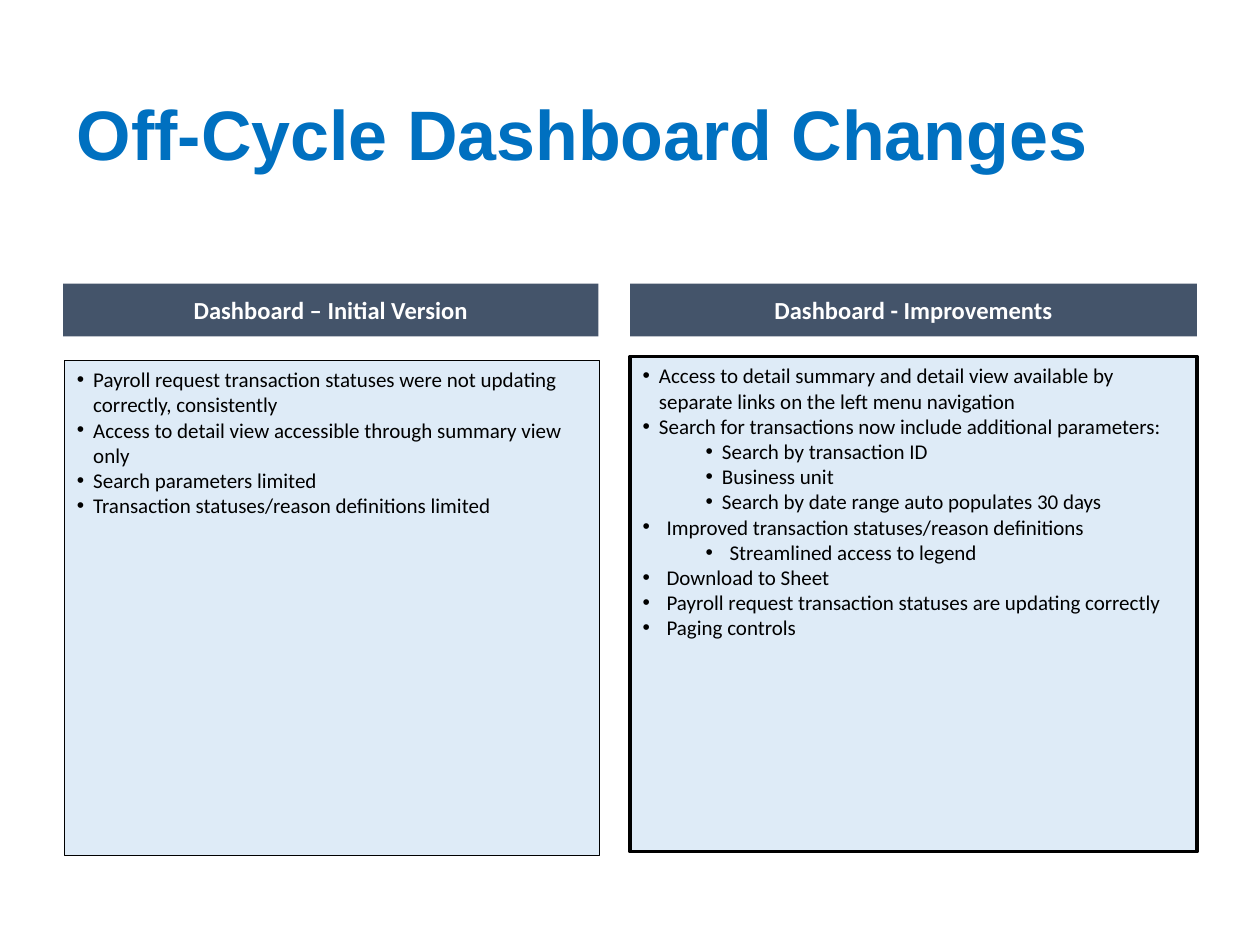
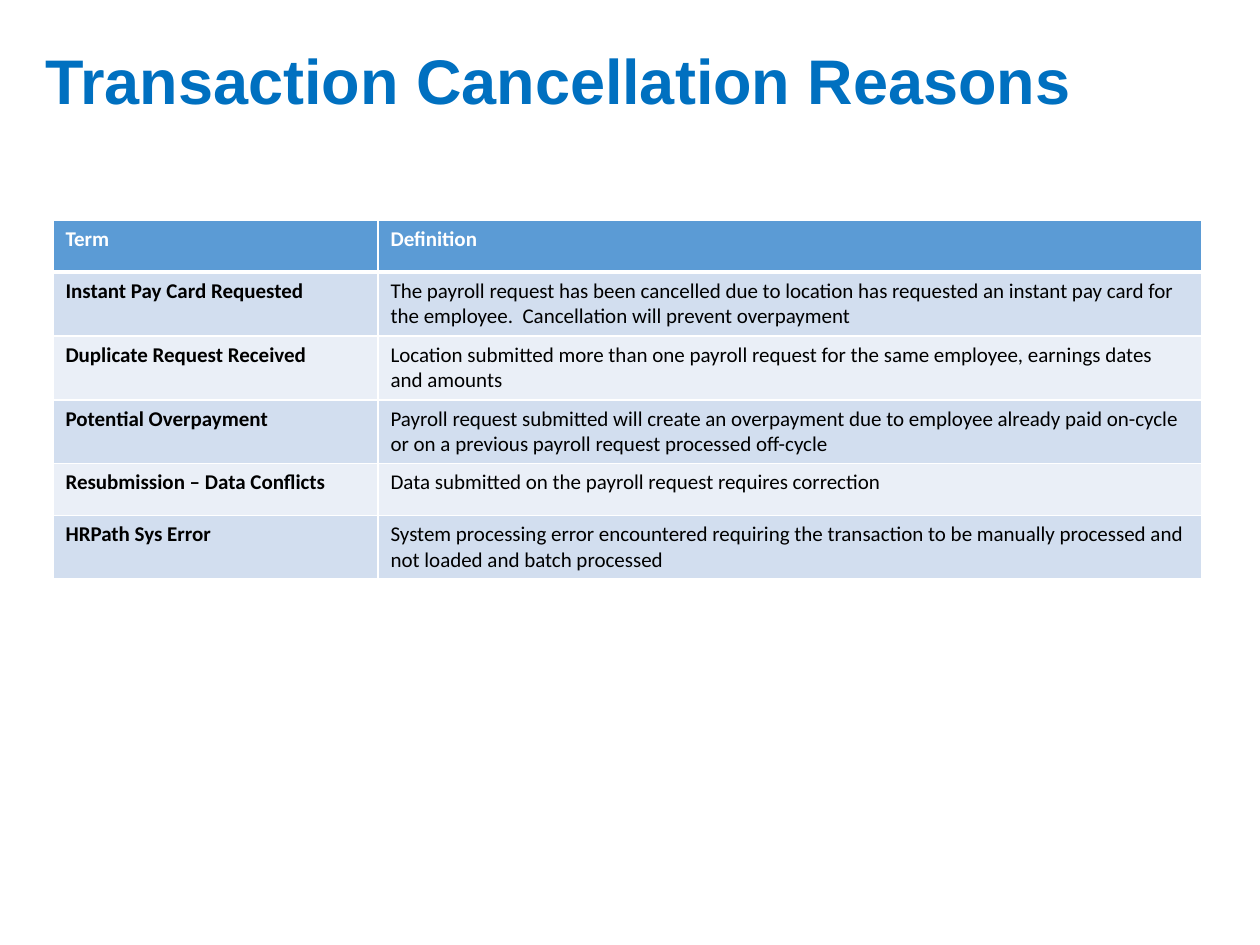
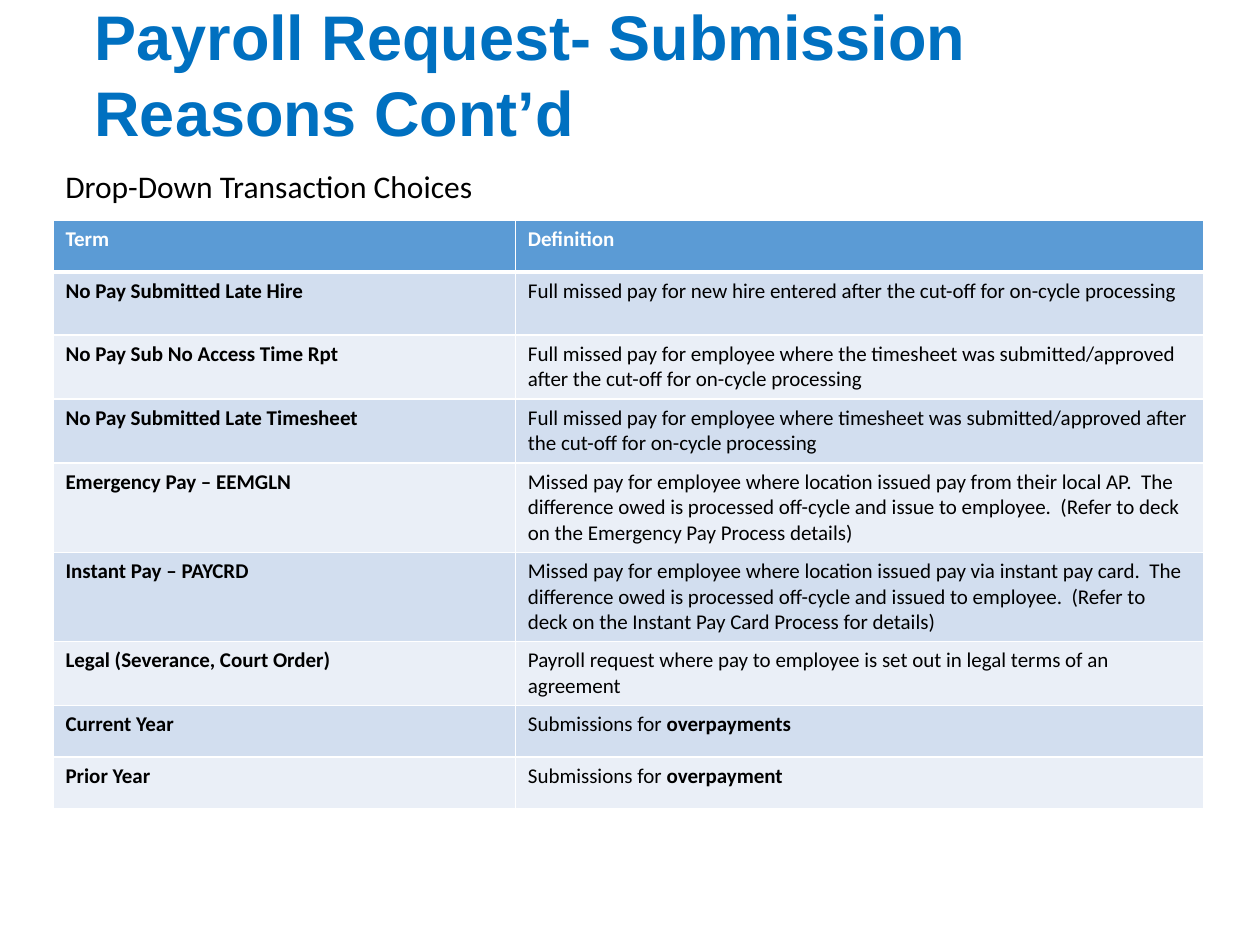
from lxml.etree import SubElement
from pptx import Presentation
from pptx.dml.color import RGBColor
from pptx.enum.text import MSO_ANCHOR, MSO_AUTO_SIZE, PP_ALIGN
from pptx.oxml.ns import qn
from pptx.util import Inches, Pt

SLIDE_WIDTH = Inches(10)
SLIDE_HEIGHT = Inches(7.5)
COLUMN = SLIDE_WIDTH / 10
ROW = SLIDE_HEIGHT / 7.5

TITLE_BLUE = RGBColor(0x00, 0x70, 0xC0)
SLATE = RGBColor(0x44, 0x54, 0x6A)
PANEL_BLUE = RGBColor(0xDE, 0xEB, 0xF7)
HEADER_BLUE = RGBColor(0x5B, 0x9B, 0xD5)
BAND_COLORS = (RGBColor(0xD2, 0xDE, 0xEF), RGBColor(0xEA, 0xEF, 0xF7))
BLACK = RGBColor(0x00, 0x00, 0x00)
WHITE = RGBColor(0xFF, 0xFF, 0xFF)

COMPARISON_LAYOUT = 4
TITLE_ONLY_LAYOUT = 5

INITIAL_VERSION = [
    ("Payroll request transaction statuses were not updating correctly, consistently", 0, 0.13, 0.13),
    ("Access to detail view accessible through summary view only", 0, 0.13, 0.13),
    ("Search parameters limited", 0, 0.13, 0.13),
    ("Transaction statuses/reason definitions limited", 0, 0.13, 0.13),
]

IMPROVEMENTS = [
    ("Access to detail summary and detail view available by separate links on the left menu navigation", 0, 0.13, 0.13),
    ("Search for transactions now include additional parameters:", 0, 0.13, 0.13),
    ("Search by transaction ID", 1, 0.63, 0.13),
    ("Business unit", 1, 0.63, 0.13),
    ("Search by date range auto populates 30 days", 1, 0.63, 0.13),
    ("Improved transaction statuses/reason definitions", 1, 0.19, 0.19),
    ("Streamlined access to legend", 2, 0.69, 0.19),
    ("Download to Sheet", 1, 0.19, 0.19),
    ("Payroll request transaction statuses are updating correctly", 1, 0.19, 0.19),
    ("Paging controls", 1, 0.19, 0.19),
]

CANCELLATION_REASONS = [
    ("Instant Pay Card Requested", 2,
     "The payroll request has been cancelled due to location has requested an instant pay card "
     "for the employee.  Cancellation will prevent overpayment"),
    ("Duplicate Request Received", 2,
     "Location submitted more than one payroll request for the same employee, earnings dates and amounts"),
    ("Potential Overpayment", 2,
     "Payroll request submitted will create an overpayment due to employee already paid on-cycle "
     "or on a previous payroll request processed off-cycle"),
    ("Resubmission – Data Conflicts", 1,
     "Data submitted on the payroll request requires correction"),
    ("HRPath Sys Error", 2,
     "System processing error encountered requiring the transaction to be manually processed "
     "and not loaded and batch processed"),
]

SUBMISSION_REASONS = [
    ("No Pay Submitted Late Hire", 2,
     "Full missed pay for new hire entered after the cut-off for on-cycle processing"),
    ("No Pay Sub No Access Time Rpt", 2,
     "Full missed pay for employee where the timesheet was submitted/approved after the cut-off "
     "for on-cycle processing"),
    ("No Pay Submitted Late Timesheet", 2,
     "Full missed pay for employee where timesheet was submitted/approved after the cut-off "
     "for on-cycle processing"),
    ("Emergency Pay – EEMGLN", 3,
     "Missed pay for employee where location issued pay from their local AP.  The difference owed "
     "is processed off-cycle and issue to employee.  (Refer to deck on the Emergency Pay Process details)"),
    ("Instant Pay – PAYCRD", 3,
     "Missed pay for employee where location issued pay via instant pay card.  The difference owed "
     "is processed off-cycle and issued to employee.  (Refer to deck on the Instant Pay Card Process for details)"),
    ("Legal (Severance, Court Order)", 2,
     "Payroll request where pay to employee is set out in legal terms of an agreement"),
    ("Current Year", 1, "Submissions for *overpayments"),
    ("Prior Year", 1, "Submissions for *overpayment"),
]


def grid_box(left, top, width, height):
    return round(left * COLUMN), round(top * ROW), round(width * COLUMN), round(height * ROW)


def place(shape, box):
    shape.left, shape.top, shape.width, shape.height = grid_box(*box)
    shape.text_frame.word_wrap = True
    shape.text_frame.auto_size = MSO_AUTO_SIZE.NONE


def format_run(run, size, color, bold=False, font_name="Calibri"):
    run.font.name = font_name
    run.font.size = Pt(size)
    run.font.bold = bold
    run.font.color.rgb = color


def add_titled_slide(presentation, layout, title, box, size=36):
    slide = presentation.slides.add_slide(presentation.slide_layouts[layout])
    shape = slide.shapes.title
    place(shape, box)
    shape.text_frame.text = title
    shape.text_frame.vertical_anchor = MSO_ANCHOR.MIDDLE
    paragraph = shape.text_frame.paragraphs[0]
    paragraph.alignment = PP_ALIGN.LEFT
    format_run(paragraph.runs[0], size, TITLE_BLUE, True, "Arial")
    return slide


def fill_header(shape, text, box):
    place(shape, box)
    shape.fill.solid()
    shape.fill.fore_color.rgb = SLATE
    shape.text_frame.text = text
    shape.text_frame.vertical_anchor = MSO_ANCHOR.MIDDLE
    paragraph = shape.text_frame.paragraphs[0]
    paragraph.alignment = PP_ALIGN.CENTER
    paragraph.space_before = Pt(0)
    format_run(paragraph.runs[0], 14, WHITE, True)


def set_bullet(paragraph, margin, hanging):
    properties = paragraph._p.get_or_add_pPr()
    properties.set("marL", str(Inches(margin)))
    properties.set("indent", str(-Inches(hanging)))
    SubElement(properties, qn("a:buFont"), typeface="Arial")
    SubElement(properties, qn("a:buChar"), char="•")


def fill_panel(shape, items, box, line_width):
    place(shape, box)
    shape.fill.solid()
    shape.fill.fore_color.rgb = PANEL_BLUE
    shape.line.color.rgb = BLACK
    shape.line.width = Pt(line_width)
    text_frame = shape.text_frame
    text_frame.text = "\n".join(item[0] for item in items)
    for paragraph, (_, level, margin, hanging) in zip(text_frame.paragraphs, items):
        paragraph.level = level
        paragraph.space_before = Pt(0)
        set_bullet(paragraph, margin, hanging)
        format_run(paragraph.runs[0], 12, BLACK)


def set_borders(cell, widths):
    properties = cell._tc.get_or_add_tcPr()
    for side, width in widths.items():
        line = SubElement(properties, qn(f"a:ln{side}"), w=str(Pt(width)))
        fill = SubElement(line, qn("a:solidFill"))
        SubElement(fill, qn("a:srgbClr"), val=str(WHITE))


def fill_cell(cell, text, row_index, is_term):
    is_header = row_index == 0
    set_borders(cell, {"L": 1, "R": 1, "T": 3 if row_index == 1 else 1, "B": 3 if is_header else 1})
    cell.fill.solid()
    cell.fill.fore_color.rgb = HEADER_BLUE if is_header else BAND_COLORS[(row_index - 1) % 2]
    paragraph = cell.text_frame.paragraphs[0]
    for part_index, part in enumerate(text.split("*")):
        run = paragraph.add_run()
        run.text = part
        format_run(run, 12, WHITE if is_header else BLACK, is_header or is_term or part_index == 1)


def add_definition_table(slide, reasons, column_widths):
    rows = [("Term", 1, "Definition")] + reasons
    heights = [max(0.41, 0.1 + 0.2 * lines) for _, lines, _ in rows]
    box = grid_box(0.42, 1.75, sum(column_widths), sum(heights))
    table = slide.shapes.add_table(len(rows), len(column_widths), *box).table
    for column, width in zip(table.columns, column_widths):
        column.width = round(width * COLUMN)
    for row_index, (term, _, definition) in enumerate(rows):
        table.rows[row_index].height = round(heights[row_index] * ROW)
        fill_cell(table.cell(row_index, 0), term, row_index, True)
        fill_cell(table.cell(row_index, 1), definition, row_index, False)


def add_caption(slide, text, box):
    shape = slide.shapes.add_textbox(*grid_box(*box))
    shape.text_frame.word_wrap = True
    shape.text_frame.text = text
    format_run(shape.text_frame.paragraphs[0].runs[0], 18, BLACK)


def add_changes_slide(presentation):
    slide = add_titled_slide(presentation, COMPARISON_LAYOUT, "Off-Cycle Dashboard Changes",
                             (0.51, 0.33, 8.62, 1.45), 40)
    _, left_header, left_panel, right_header, right_panel = slide.placeholders
    fill_header(left_header, "Dashboard – Initial Version", (0.5, 2.25, 4.25, 0.42))
    fill_header(right_header, "Dashboard - Improvements", (5, 2.25, 4.5, 0.42))
    fill_panel(left_panel, INITIAL_VERSION, (0.51, 2.86, 4.25, 3.93), 0.25)
    fill_panel(right_panel, IMPROVEMENTS, (5, 2.83, 4.5, 3.93), 2)


def add_cancellation_slide(presentation):
    slide = add_titled_slide(presentation, TITLE_ONLY_LAYOUT, "Transaction Cancellation Reasons",
                             (0.26, 0.33, 9.28, 0.6))
    add_definition_table(slide, CANCELLATION_REASONS, (2.58, 6.54))


def add_submission_slide(presentation):
    slide = add_titled_slide(presentation, TITLE_ONLY_LAYOUT, "Payroll Request- Submission Reasons Cont’d",
                             (0.65, 0.28, 8.89, 0.6))
    add_definition_table(slide, SUBMISSION_REASONS, (3.67, 5.46))
    add_caption(slide, "Drop-Down Transaction Choices", (0.42, 1.28, 3.94, 0.4))


def main():
    presentation = Presentation()
    presentation.slide_width = SLIDE_WIDTH
    presentation.slide_height = SLIDE_HEIGHT
    add_changes_slide(presentation)
    add_cancellation_slide(presentation)
    add_submission_slide(presentation)
    presentation.save("out.pptx")


if __name__ == "__main__":
    main()
